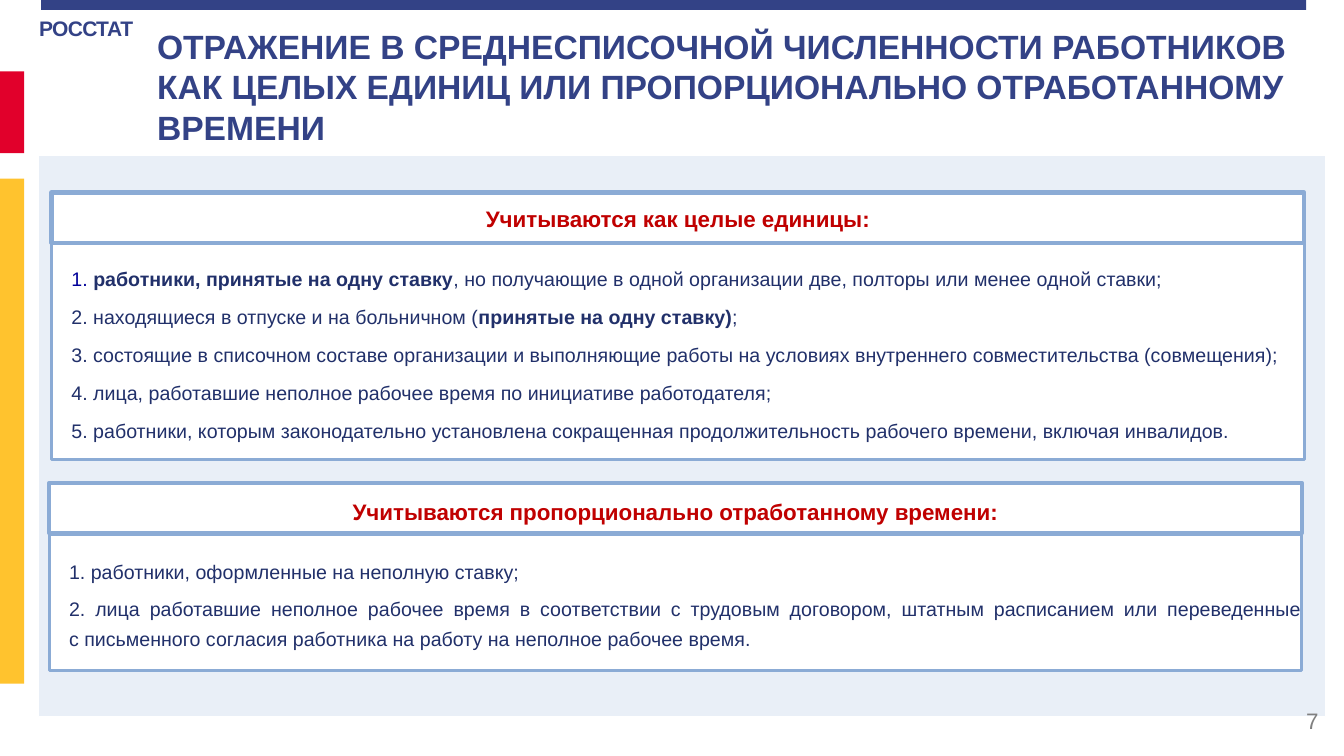
from dataclasses import dataclass

from pptx import Presentation
from pptx.dml.color import RGBColor
from pptx.enum.shapes import MSO_SHAPE as Form
from pptx.enum.text import MSO_ANCHOR as Anchor, PP_ALIGN as Align
from pptx.util import Cm, Pt

NAVY = RGBColor(0x33, 0x42, 0x86)
INK = RGBColor(0x21, 0x30, 0x6A)
BLUE = RGBColor(0x00, 0x00, 0x99)
RED = RGBColor(0xE1, 0x00, 0x2B)
DARK_RED = RGBColor(0xC0, 0x00, 0x00)
GOLD = RGBColor(0xFF, 0xC3, 0x2E)
PALE = RGBColor(0xE9, 0xEF, 0xF7)
EDGE = RGBColor(0x8B, 0xAB, 0xD5)
GREY = RGBColor(0x80, 0x80, 0x80)
WHITE = RGBColor(0xFF, 0xFF, 0xFF)


@dataclass
class Box:
    left: float
    top: float
    width: float
    height: float

    def place(self) -> tuple:
        return Cm(self.left), Cm(self.top), Cm(self.width), Cm(self.height)


@dataclass
class Bit:
    text: str
    bold: bool = False
    color: RGBColor = INK


@dataclass
class Group:
    left: float
    top: float
    body_top: float
    body_height: float
    title: str
    items: list[list[Bit]]
    align: Align
    title_gap: Pt | None = None


WIDTH, HEAD = 31.57, 1.27

BARS = [
    (Box(1.04, 0, 31.88, 0.25), NAVY),
    (Box(0, 1.8, 0.61, 2.06), RED),
    (Box(0, 4.5, 0.61, 12.73), GOLD),
]

GROUPS = [
    Group(1.3, 4.85, 6.1, 5.49, "Учитываются как целые единицы:", [
        [Bit("1. ", color=BLUE), Bit("работники, принятые на одну ставку", True),
         Bit(", но получающие в одной организации две, полторы или менее одной ставки;")],
        [Bit("2. находящиеся в отпуске и на больничном ("),
         Bit("принятые на одну ставку)", True), Bit(";")],
        [Bit("3. состоящие в списочном составе организации и выполняющие работы "
             "на условиях внутреннего совместительства (совмещения);")],
        [Bit("4. лица, работавшие неполное рабочее время по инициативе работодателя;")],
        [Bit("5. работники, которым законодательно установлена сокращенная "
             "продолжительность рабочего времени, включая инвалидов.")],
    ], Align.LEFT),
    Group(1.24, 12.17, 13.46, 3.43, "Учитываются пропорционально отработанному времени:", [
        [Bit("1. работники, оформленные на неполную ставку;")],
        [Bit("2. лица работавшие неполное рабочее время в соответствии с трудовым "
             "договором, штатным расписанием или переведенные\n"
             "с письменного согласия работника на работу на неполное рабочее время.")],
    ], Align.JUSTIFY, Pt(21)),
]


def add_rect(slide, box: Box, fill: RGBColor, line: RGBColor | None = None,
             weight: float = 1):
    rect = slide.shapes.add_shape(Form.RECTANGLE, *box.place())
    rect.shadow.inherit = False
    rect.fill.solid()
    rect.fill.fore_color.rgb = fill
    if line is None:
        rect.line.fill.background()
    else:
        rect.line.color.rgb = line
        rect.line.width = Pt(weight)
    return rect


def set_frame(shape, top: float):
    """Wrap the text from the top, with no margin but the top one."""
    frame = shape.text_frame
    frame.word_wrap = True
    frame.vertical_anchor = Anchor.TOP
    frame.margin_left = frame.margin_right = frame.margin_bottom = 0
    frame.margin_top = Cm(top)
    return frame


def add_bit(para, bit: Bit, size: float) -> None:
    for index, part in enumerate(bit.text.split("\n")):
        if index:
            para.add_line_break()
        run = para.add_run()
        run.text = part
        run.font.name = "Arial"
        run.font.size = Pt(size)
        run.font.bold = bit.bold
        run.font.color.rgb = bit.color


def add_label(slide, box: Box, bit: Bit, size: float):
    label = slide.shapes.add_textbox(*box.place())
    label.text_frame.word_wrap = True
    add_bit(label.text_frame.paragraphs[0], bit, size)
    return label


def add_group(slide, group: Group) -> None:
    body = add_rect(slide, Box(group.left, group.body_top, WIDTH, group.body_height),
                    WHITE, EDGE, 2.25)
    frame = set_frame(body, 0.49)
    for index, item in enumerate(group.items):
        para = frame.add_paragraph() if index else frame.paragraphs[0]
        para.alignment = group.align
        para.line_spacing = Pt(21)
        para.space_after = Pt(6)
        para._p.get_or_add_pPr().set("marL", str(Cm(0.5)))
        for bit in item:
            add_bit(para, bit, 14)

    head = add_rect(slide, Box(group.left, group.top, WIDTH, HEAD), WHITE, EDGE, 3)
    para = set_frame(head, 0.32).paragraphs[0]
    para.alignment = Align.CENTER
    para.line_spacing = group.title_gap
    add_bit(para, Bit(group.title, True, DARK_RED), 16)


def main() -> None:
    deck = Presentation()
    deck.slide_width, deck.slide_height = Cm(33.87), Cm(19.05)
    slide = deck.slides.add_slide(deck.slide_layouts[6])

    agency = add_label(slide, Box(0.99, 0.33, 2.92, 0.81), Bit("РОССТАТ", True, NAVY), 15)
    run = set_frame(agency, 0.06).paragraphs[0].runs[0]
    run.font._element.set("spc", "-50")
    for box, fill in BARS:
        add_rect(slide, box, fill)
    add_rect(slide, Box(0.97, 3.91, 32.44, 14.15), PALE, WHITE)

    number = add_label(slide, Box(25.86, 17.65, 7.62, 1.02), Bit("7", color=GREY), 16)
    number.text_frame.vertical_anchor = Anchor.MIDDLE
    number.text_frame.paragraphs[0].alignment = Align.RIGHT
    add_label(slide, Box(3.71, 0.53, 29.01, 3.33), Bit(
        "ОТРАЖЕНИЕ В СРЕДНЕСПИСОЧНОЙ ЧИСЛЕННОСТИ РАБОТНИКОВ КАК ЦЕЛЫХ ЕДИНИЦ "
        "ИЛИ ПРОПОРЦИОНАЛЬНО ОТРАБОТАННОМУ ВРЕМЕНИ", True, NAVY), 24)
    for group in GROUPS:
        add_group(slide, group)
    deck.save("out.pptx")


if __name__ == "__main__":
    main()
